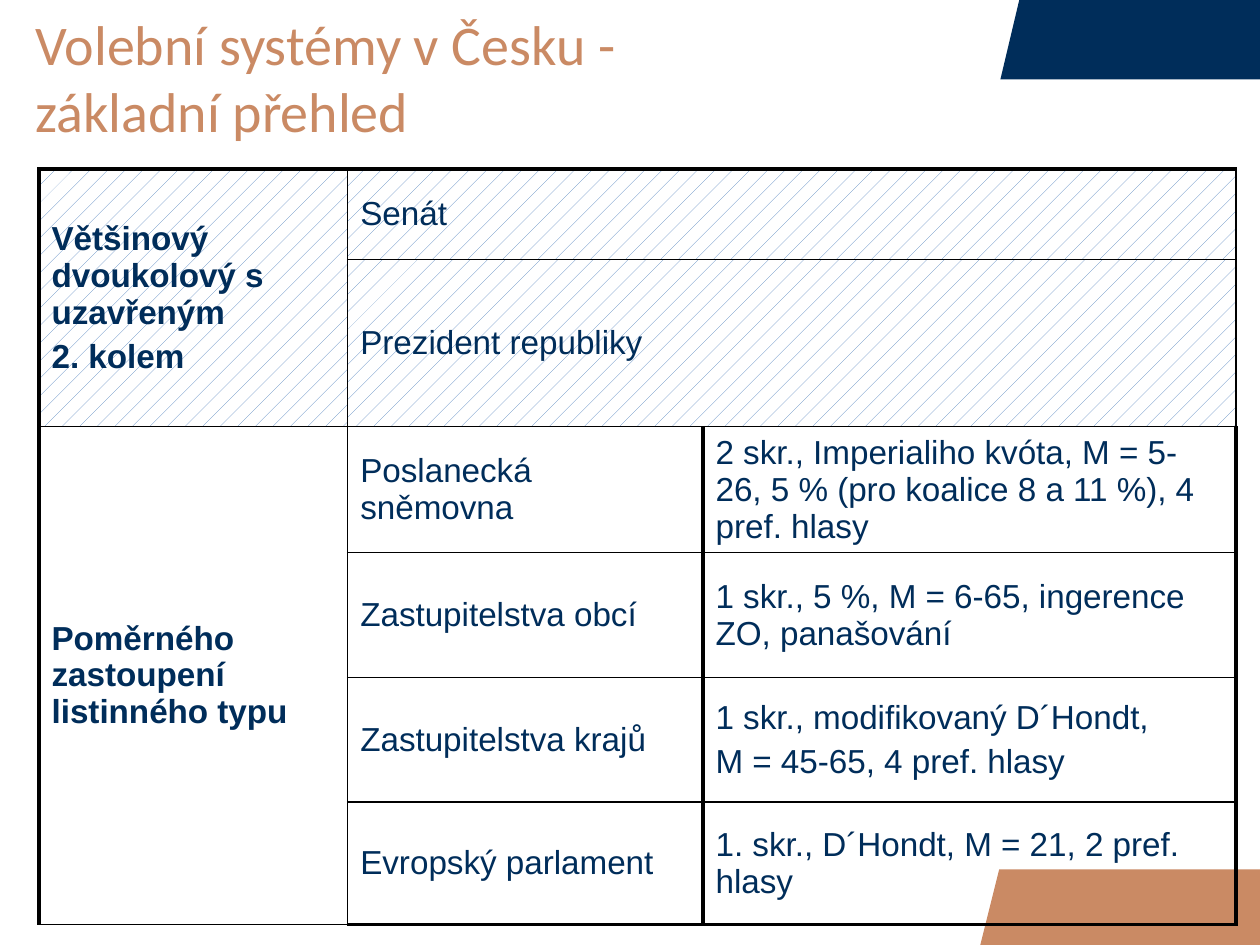
from dataclasses import dataclass

from lxml import etree
from pptx import Presentation
from pptx.dml.color import RGBColor
from pptx.enum.dml import MSO_PATTERN
from pptx.enum.text import MSO_ANCHOR, MSO_AUTO_SIZE, PP_ALIGN
from pptx.oxml.ns import qn
from pptx.util import Inches, Pt

MIDDLE = MSO_ANCHOR.MIDDLE
LEFT = PP_ALIGN.LEFT
NO_AUTOFIT = MSO_AUTO_SIZE.NONE
DOTTED = MSO_PATTERN.PERCENT_5


@dataclass(frozen=True)
class Theme:
    navy: RGBColor = RGBColor(0x00, 0x2D, 0x5A)
    copper: RGBColor = RGBColor(0xCA, 0x8A, 0x64)
    blue: RGBColor = RGBColor(0x4F, 0x81, 0xBD)
    white: RGBColor = RGBColor(0xFF, 0xFF, 0xFF)
    border: str = "000000"
    title_font: str = "Calibri"
    body_font: str = "Arial"
    title_size: Pt = Pt(32)
    body_size: Pt = Pt(19)
    paragraph_gap: Pt = Pt(3.8)
    thin: Pt = Pt(1)
    thick: Pt = Pt(2.25)


THEME = Theme()

TITLE = "Volební systémy v Česku - základní přehled"
COLUMN_WIDTHS = (2.45, 2.82, 4.23)
ROW_HEIGHTS = (0.72, 0.72, 1, 0.99, 0.99, 0.97)
FIRST_PROPORTIONAL_ROW = 2
MERGES = (((0, 0), (1, 0)), ((0, 1), (0, 2)), ((1, 1), (1, 2)), ((2, 0), (5, 0)))
ROWS = (
    (("Většinový dvoukolový s uzavřeným", "2. kolem"), ("Senát",), ()),
    ((), ("Prezident republiky",), ()),
    (
        ("Poměrného zastoupení listinného typu",),
        ("Poslanecká sněmovna",),
        ("2 skr., Imperialiho kvóta, M = 5-26, 5 % (pro koalice 8 a 11 %), 4 pref. hlasy",),
    ),
    ((), ("Zastupitelstva obcí",), ("1 skr., 5 %, M = 6-65, ingerence ZO, panašování",)),
    ((), ("Zastupitelstva krajů",), ("1 skr., modifikovaný D´Hondt,", "M = 45-65, 4 pref. hlasy")),
    ((), ("Evropský parlament",), ("1. skr., D´Hondt, M = 21, 2 pref. hlasy",)),
)


def add_run(paragraph, text, font_name, size, color, bold=False):
    run = paragraph.add_run()
    run.text = text
    run.font.name = font_name
    run.font.size = size
    run.font.bold = bold
    run.font.color.rgb = color


def add_corner_band(slide, left, top, width, height, color):
    slant = Inches(0.15)
    builder = slide.shapes.build_freeform(left, top + height)
    builder.add_line_segments(
        [(left + slant, top), (left + width, top), (left + width, top + height)], close=True
    )
    band = builder.convert_to_shape()
    band.shadow.inherit = False
    band.fill.solid()
    band.fill.fore_color.rgb = color
    band.line.fill.background()


def place_title(slide, left, top, width, height):
    title = slide.shapes.title
    title.left, title.top, title.width, title.height = left, top, width, height
    frame = title.text_frame
    frame.auto_size = NO_AUTOFIT
    frame.word_wrap = True
    frame.vertical_anchor = MIDDLE
    frame.margin_left = frame.margin_right = Inches(0.28)
    paragraph = frame.paragraphs[0]
    paragraph.alignment = LEFT
    add_run(paragraph, TITLE, THEME.title_font, THEME.title_size, THEME.copper)


def set_borders(cell, widths):
    properties = cell._tc.get_or_add_tcPr()
    for position, (side, width) in enumerate(widths.items()):
        line = etree.Element(qn(f"a:ln{side}"), w=str(int(width)))
        fill = etree.SubElement(line, qn("a:solidFill"))
        etree.SubElement(fill, qn("a:srgbClr"), val=THEME.border)
        properties.insert(position, line)


def border_widths(row, column):
    last_row, last_column = len(ROW_HEIGHTS) - 1, len(COLUMN_WIDTHS) - 1
    proportional = row >= FIRST_PROPORTIONAL_ROW
    thick = {
        "L": column == 0 or (column == last_column and proportional),
        "R": column == last_column or (column == last_column - 1 and proportional),
        "T": row == 0,
        "B": row == last_row,
    }
    return {side: THEME.thick if heavy else THEME.thin for side, heavy in thick.items()}


def fill_cell(cell, lines, bold, patterned):
    cell.vertical_anchor = MIDDLE
    if patterned:
        cell.fill.patterned()
        cell.fill.pattern = DOTTED
        cell.fill.fore_color.rgb = THEME.blue
        cell.fill.back_color.rgb = THEME.white
    else:
        cell.fill.background()
    frame = cell.text_frame
    for index, text in enumerate(lines):
        paragraph = frame.add_paragraph() if index else frame.paragraphs[0]
        if index:
            paragraph.space_before = THEME.paragraph_gap
        add_run(paragraph, text, THEME.body_font, THEME.body_size, THEME.navy, bold)


def add_systems_table(slide, left, top, width, height):
    table = slide.shapes.add_table(
        len(ROW_HEIGHTS), len(COLUMN_WIDTHS), left, top, width, height
    ).table
    table.first_row = False
    table.horz_banding = False
    for column, column_width in zip(table.columns, COLUMN_WIDTHS):
        column.width = Inches(column_width)
    for row, row_height in zip(table.rows, ROW_HEIGHTS):
        row.height = Inches(row_height)
    for start, end in MERGES:
        table.cell(*start).merge(table.cell(*end))
    for row, contents in enumerate(ROWS):
        for column, lines in enumerate(contents):
            cell = table.cell(row, column)
            fill_cell(cell, lines, column == 0, row < FIRST_PROPORTIONAL_ROW)
            set_borders(cell, border_widths(row, column))


def main():
    presentation = Presentation()
    presentation.slide_width = Inches(10)
    presentation.slide_height = Inches(7.5)
    slide = presentation.slides.add_slide(presentation.slide_layouts[5])
    add_corner_band(slide, Inches(7.94), Inches(0), Inches(2.06), Inches(0.63), THEME.navy)
    add_corner_band(slide, Inches(7.78), Inches(6.9), Inches(2.22), Inches(0.6), THEME.copper)
    place_title(slide, Inches(0), Inches(0), Inches(6.24), Inches(1.22))
    add_systems_table(slide, Inches(0.31), Inches(1.34), Inches(9.5), Inches(5.43))
    presentation.save("out.pptx")


if __name__ == "__main__":
    main()
